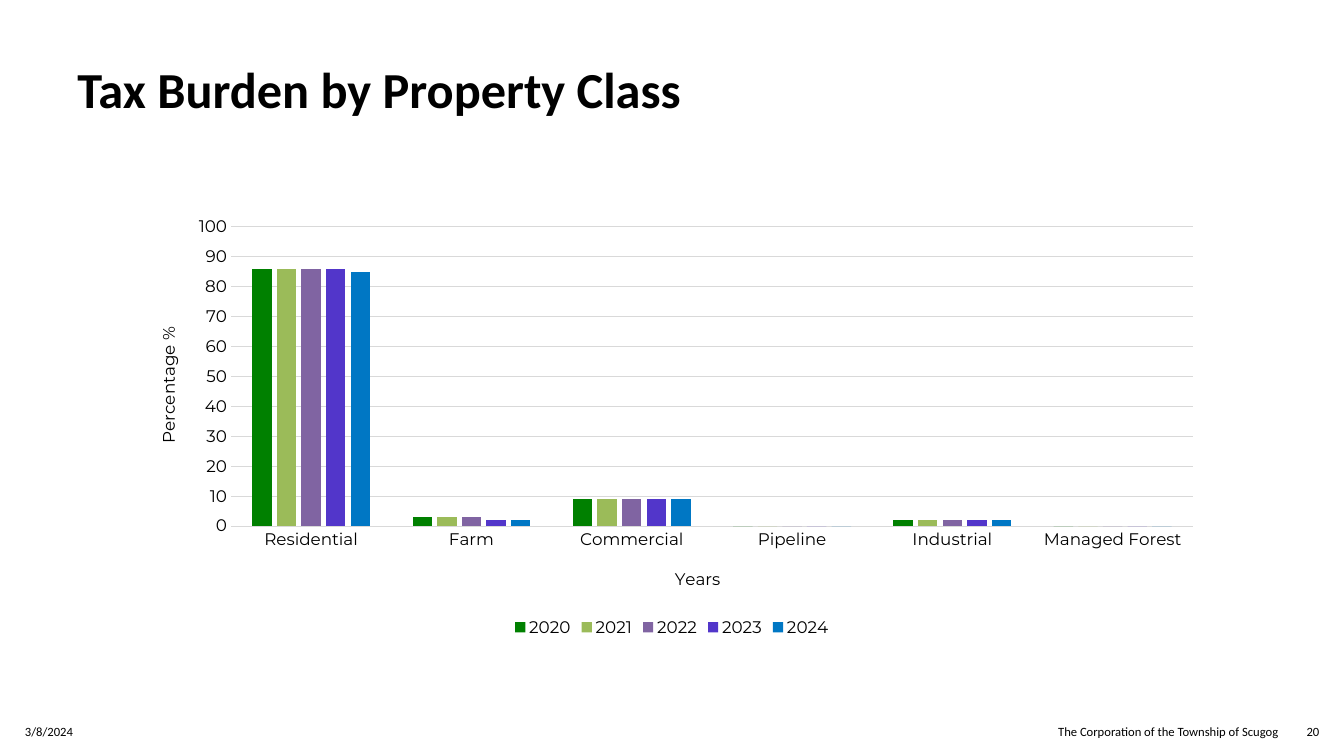
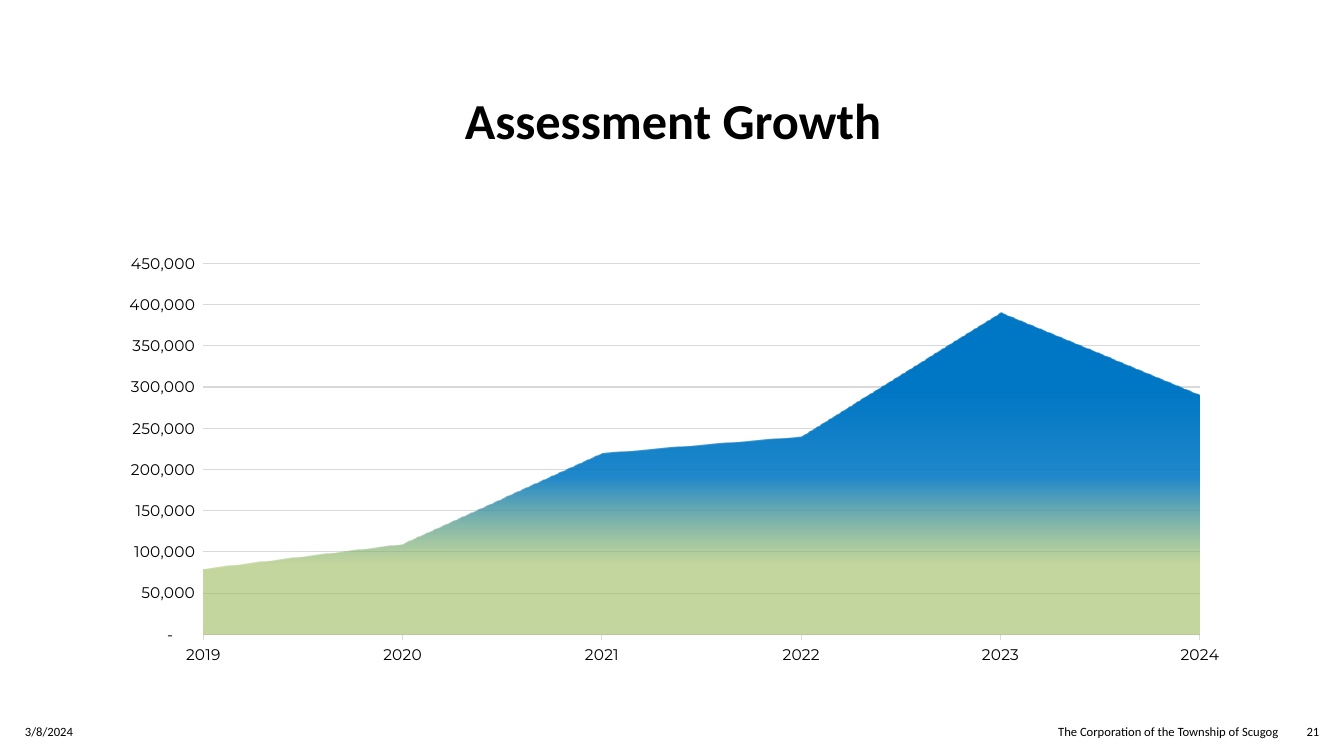
from dataclasses import dataclass

from pptx import Presentation
from pptx.chart.data import CategoryChartData
from pptx.dml.color import RGBColor
from pptx.enum.chart import XL_CHART_TYPE, XL_LEGEND_POSITION, XL_TICK_MARK
from pptx.enum.text import MSO_ANCHOR, PP_ALIGN
from pptx.oxml import parse_xml
from pptx.oxml.ns import nsdecls, qn
from pptx.util import Cm, Pt

COLUMNS, AREA = XL_CHART_TYPE.COLUMN_CLUSTERED, XL_CHART_TYPE.AREA_STACKED
LEGEND_BOTTOM = XL_LEGEND_POSITION.BOTTOM
TICK_NONE, TICK_OUTSIDE = XL_TICK_MARK.NONE, XL_TICK_MARK.OUTSIDE
TOP, MIDDLE = MSO_ANCHOR.TOP, MSO_ANCHOR.MIDDLE
LEFT, CENTER, RIGHT = PP_ALIGN.LEFT, PP_ALIGN.CENTER, PP_ALIGN.RIGHT


@dataclass(frozen=True)
class Theme:
    text_font: str = "Calibri"
    chart_font: str = "Montserrat"
    text: str = "000000"
    background: str = "FFFFFF"
    grid: str = "D9D9D9"
    blue: str = "0077C4"
    light_green: str = "9BBB59"
    series: tuple = ("008000", "9BBB59", "8064A2", "5236CA", "0077C4")
    title_size: int = 36
    footer_size: int = 9


theme = Theme()


def add_text(slide, text, left, top, width, height, size=theme.footer_size,
             bold=False, align=LEFT, anchor=MIDDLE, line_spacing=1.0, space_after=6):
    """Add a one-paragraph text box; lengths are in centimetres."""
    box = slide.shapes.add_textbox(Cm(left), Cm(top), Cm(width), Cm(height))
    frame = box.text_frame
    frame.word_wrap = True
    frame.vertical_anchor = anchor
    paragraph = frame.paragraphs[0]
    paragraph.text = text
    paragraph.alignment = align
    paragraph.line_spacing = line_spacing
    paragraph.space_after = Pt(space_after)
    font = paragraph.font
    font.name, font.size, font.bold = theme.text_font, Pt(size), bold
    font.color.rgb = RGBColor.from_string(theme.text)


def set_layout(element, position, **values):
    """Fix a chart part at fractions of the chart area."""
    settings = {"xMode": "edge", "yMode": "edge", **values}
    if "w" in values:
        settings = {"layoutTarget": "inner", **settings}
    parts = "".join(f'<c:{name} val="{value}"/>' for name, value in settings.items())
    for old_layout in element.findall(qn("c:layout")):
        element.remove(old_layout)
    element.insert(position, parse_xml(
        f'<c:layout {nsdecls("c")}><c:manualLayout>{parts}</c:manualLayout></c:layout>'))


pages = [
    {
        "number": "20",
        "title": "Tax Burden by Property Class",
        "title_box": (1.7, 1.52, 29.6, 3.15),
        "title_format": {"align": LEFT, "anchor": TOP},
        "chart_type": COLUMNS,
        "chart_box": (3.25, 5.26, 27.36, 10.9),
        "plot": {"x": 0.094, "y": 0.042, "w": 0.886, "h": 0.692},
        "size": 12,
        "categories": ["Residential", "Farm", "Commercial", "Pipeline",
                       "Industrial", "Managed Forest"],
        "series": {
            "2020": [86, 3, 9, 0, 2, 0],
            "2021": [86, 3, 9, 0, 2, 0],
            "2022": [86, 3, 9, 0, 2, 0],
            "2023": [86, 2, 9, 0, 2, 0],
            "2024": [85, 2, 9, 0, 2, 0],
        },
        "maximum": 100,
        "step": 10,
        "value_format": "General",
        "category_tick": TICK_NONE,
    },
    {
        "number": "21",
        "title": "Assessment Growth",
        "title_box": (4.24, 1.52, 25.45, 3.15),
        "title_format": {"align": CENTER, "anchor": MIDDLE},
        "chart_type": AREA,
        "chart_box": (2.6, 6.15, 28.7, 10.8),
        "plot": {"x": 0.088, "y": 0.045, "w": 0.875, "h": 0.866},
        "size": 11,
        "categories": ["2019", "2020", "2021", "2022", "2023", "2024"],
        "series": {"Series 1": [80000, 110000, 220000, 240000, 390000, 290000]},
        "maximum": 450000,
        "step": 50000,
        "value_format": r'_(* #,##0_);_(* \(#,##0\);_(* "-"??_);_(@_)',
        "category_tick": TICK_OUTSIDE,
    },
]

presentation = Presentation()
presentation.slide_width, presentation.slide_height = Cm(33.87), Cm(19.05)
blank_layout = presentation.slide_layouts[6]
background = presentation.slide_master.background.fill
background.solid()
background.fore_color.rgb = RGBColor.from_string(theme.background)

charts = []
for page in pages:
    slide = presentation.slides.add_slide(blank_layout)
    add_text(slide, page["title"], *page["title_box"], size=theme.title_size, bold=True,
             line_spacing=0.9, space_after=0, **page["title_format"])

    data = CategoryChartData()
    data.categories = page["categories"]
    for name, values in page["series"].items():
        data.add_series(name, values)
    chart = slide.shapes.add_chart(
        page["chart_type"], *map(Cm, page["chart_box"]), data).chart
    charts.append(chart)
    chart.has_title = False
    chart.has_legend = False
    plot = chart.plots[0]
    plot.vary_by_categories = False
    set_layout(chart.element.find(f".//{qn('c:plotArea')}"), 0, **page["plot"])

    category_axis, value_axis = chart.category_axis, chart.value_axis
    category_axis.major_tick_mark = page["category_tick"]
    value_axis.major_tick_mark = TICK_NONE
    value_axis.minimum_scale, value_axis.maximum_scale = 0, page["maximum"]
    value_axis.major_unit = page["step"]
    value_axis.tick_labels.number_format = page["value_format"]
    value_axis.tick_labels.number_format_is_linked = False
    value_axis.has_major_gridlines = True
    value_axis.format.line.fill.background()
    for line in (category_axis.format.line, value_axis.major_gridlines.format.line):
        line.width = Pt(0.75)
        line.color.rgb = RGBColor.from_string(theme.grid)

    fonts = [chart.font, category_axis.tick_labels.font, value_axis.tick_labels.font]
    if page["chart_type"] == COLUMNS:
        chart.has_legend = True
        chart.legend.position = LEGEND_BOTTOM
        chart.legend.include_in_layout = False
        fonts.append(chart.legend.font)
        for axis, text, x, y in ((category_axis, "Years", 0.5, 0.824),
                                 (value_axis, "Percentage %", 0.023, 0.266)):
            axis.axis_title.text_frame.text = text
            set_layout(axis.axis_title.element if hasattr(axis.axis_title, "element")
                       else axis.axis_title._element, 1, x=x, y=y)
            fonts.append(axis.axis_title.text_frame.paragraphs[0].runs[0].font)
    for font in fonts:
        font.name, font.size, font.bold = theme.chart_font, Pt(page["size"]), False
        font.color.rgb = RGBColor.from_string(theme.text)

    add_text(slide, "3/8/2024", 0.38, 17.93, 9.7, 1.02)
    add_text(slide, "The Corporation of the Township of Scugog",
             24.66, 17.93, 7.8, 1.02, align=RIGHT)
    add_text(slide, page["number"], 32.3, 17.93, 1.2, 1.02, align=RIGHT)

column_chart, area_chart = charts

column_plot = column_chart.plots[0]
column_plot.gap_width, column_plot.overlap = 219, -27
for series, color in zip(column_plot.series, theme.series):
    series.format.fill.solid()
    series.format.fill.fore_color.rgb = RGBColor.from_string(color)

# Gradient stops: position %, colour, opacity %
stops = [(0, theme.blue, 100), (23, theme.blue, 100),
         (51, theme.blue, 87), (78, theme.light_green, 59)]
stop_xml = "".join(
    f'<a:gs pos="{position * 1000}"><a:srgbClr val="{color}">'
    f'<a:alpha val="{opacity * 1000}"/></a:srgbClr></a:gs>'
    for position, color, opacity in stops)
area_series = area_chart.plots[0].series[0]
area_series.format.fill.gradient()
area_series.format.line.fill.background()
gradient = area_chart.element.find(f".//{qn('a:gradFill')}")
gradient.getparent().replace(gradient, parse_xml(
    f'<a:gradFill {nsdecls("a")}><a:gsLst>{stop_xml}</a:gsLst>'
    '<a:lin ang="5400000" scaled="0"/></a:gradFill>'))

presentation.save("out.pptx")
